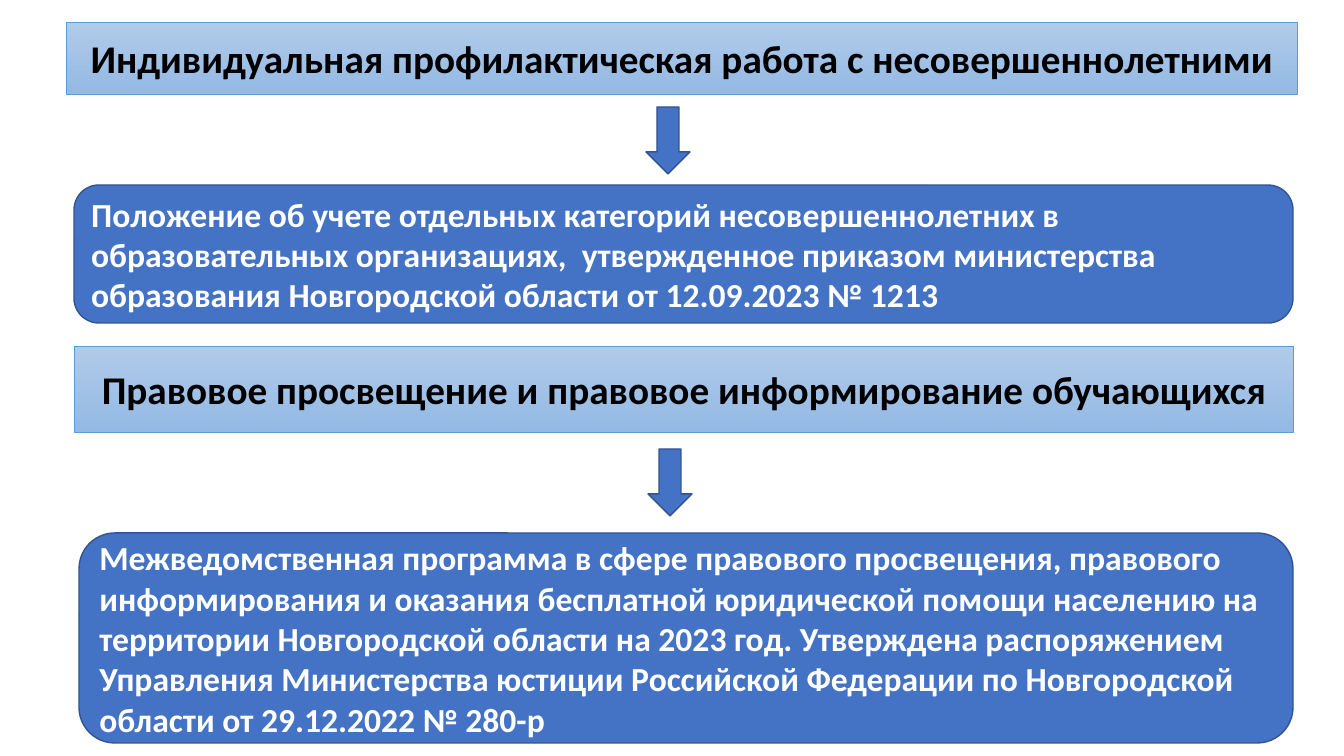
from dataclasses import dataclass

from pptx import Presentation
from pptx.dml.color import RGBColor
from pptx.enum.shapes import MSO_SHAPE as Preset
from pptx.enum.text import MSO_ANCHOR as Anchor, MSO_AUTO_SIZE as AutoSize, PP_ALIGN as Align
from pptx.shapes.autoshape import Shape
from pptx.slide import Slide
from pptx.util import Emu, Pt

EMU_PER_PX = 9071.43
SLIDE_WIDTH, SLIDE_HEIGHT = 1344, 756


@dataclass(frozen=True)
class Theme:
    font: str = "Calibri"
    heading_size: int = 28
    document_size: int = 24
    heading_text: str = "000000"
    document_text: str = "FFFFFF"
    heading_top: str = "B1CBE9"
    heading_bottom: str = "93B9E4"
    heading_line: str = "5B9BD5"
    block_fill: str = "4472C4"
    block_line: str = "325491"


THEME = Theme()


@dataclass(frozen=True)
class Box:
    left: int
    top: int
    width: int
    height: int


@dataclass(frozen=True)
class Section:
    heading: str
    heading_box: Box
    arrow_box: Box
    document: str
    document_box: Box
    corner: float


SECTIONS = [
    Section(
        "Индивидуальная профилактическая работа с несовершеннолетними",
        Box(66, 22, 1231, 72),
        Box(646, 107, 44, 67),
        "Положение об учете отдельных категорий несовершеннолетних в образовательных "
        "организациях,  утвержденное приказом министерства образования Новгородской "
        "области от 12.09.2023 № 1213",
        Box(74, 185, 1219, 138),
        0.18,
    ),
    Section(
        "Правовое просвещение и правовое информирование обучающихся",
        Box(74, 346, 1219, 86),
        Box(648, 449, 44, 67),
        "Межведомственная программа в сфере правового просвещения, правового "
        "информирования и оказания бесплатной юридической помощи населению на "
        "территории Новгородской области на 2023 год. Утверждена распоряжением "
        "Управления Министерства юстиции Российской Федерации по Новгородской "
        "области от 29.12.2022 № 280-р",
        Box(79, 533, 1214, 210),
        0.17,
    ),
]


def px(length: int) -> Emu:
    return Emu(round(length * EMU_PER_PX))


def color(code: str) -> RGBColor:
    return RGBColor.from_string(code)


def place(shape: Shape, box: Box) -> None:
    shape.left, shape.top = px(box.left), px(box.top)
    shape.width, shape.height = px(box.width), px(box.height)


def add_preset(slide: Slide, preset: Preset, box: Box) -> Shape:
    shape = slide.shapes.add_shape(
        preset, px(box.left), px(box.top), px(box.width), px(box.height)
    )
    shape.shadow.inherit = False
    return shape


def outline(shape: Shape, code: str, width: float) -> None:
    shape.line.color.rgb = color(code)
    shape.line.width = Pt(width)


def write(shape: Shape, text: str, size: int, code: str, align: Align) -> None:
    frame = shape.text_frame
    frame.word_wrap = True
    frame.auto_size = AutoSize.NONE
    frame.vertical_anchor = Anchor.MIDDLE
    paragraph = frame.paragraphs[0]
    paragraph.alignment = align
    run = paragraph.add_run()
    run.text = text
    run.font.name = THEME.font
    run.font.size = Pt(size)
    run.font.bold = True
    run.font.color.rgb = color(code)


def format_heading(shape: Shape, text: str) -> None:
    shape.fill.gradient()
    shape.fill.gradient_angle = 270
    for stop, code in zip(shape.fill.gradient_stops, (THEME.heading_top, THEME.heading_bottom)):
        stop.color.rgb = color(code)
    outline(shape, THEME.heading_line, 0.5)
    write(shape, text, THEME.heading_size, THEME.heading_text, Align.CENTER)


def add_block(slide: Slide, preset: Preset, box: Box) -> Shape:
    """Add a solid blue shape, used for arrows and documents alike."""
    block = add_preset(slide, preset, box)
    block.fill.solid()
    block.fill.fore_color.rgb = color(THEME.block_fill)
    outline(block, THEME.block_line, 1)
    return block


def add_section(slide: Slide, section: Section, heading: Shape) -> None:
    format_heading(heading, section.heading)
    add_block(slide, Preset.DOWN_ARROW, section.arrow_box)
    document = add_block(slide, Preset.ROUNDED_RECTANGLE, section.document_box)
    document.adjustments[0] = section.corner
    write(document, section.document, THEME.document_size, THEME.document_text, Align.LEFT)


def main() -> None:
    deck = Presentation()
    deck.slide_width, deck.slide_height = px(SLIDE_WIDTH), px(SLIDE_HEIGHT)
    title_only = deck.slide_layouts[5]
    slide = deck.slides.add_slide(title_only)

    prevention, education = SECTIONS
    title = slide.shapes.title
    place(title, prevention.heading_box)
    add_section(slide, prevention, title)
    add_section(slide, education, add_preset(slide, Preset.RECTANGLE, education.heading_box))
    deck.save("out.pptx")


if __name__ == "__main__":
    main()
